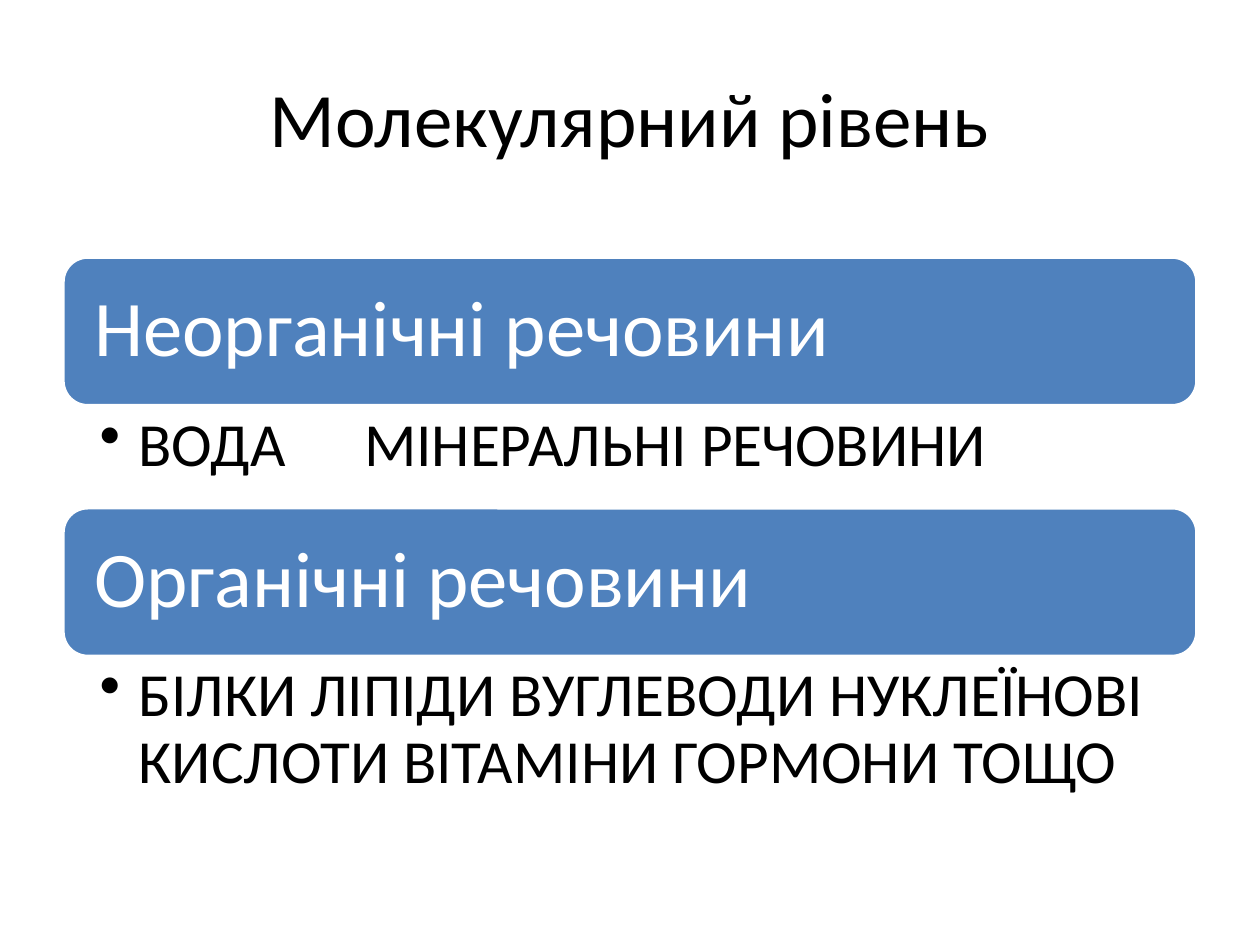
from lxml import etree
from pptx import Presentation
from pptx.dml.color import RGBColor
from pptx.enum.shapes import MSO_SHAPE
from pptx.enum.text import MSO_ANCHOR, PP_ALIGN
from pptx.oxml.ns import qn
from pptx.util import Inches, Pt

ROUND = MSO_SHAPE.ROUNDED_RECTANGLE
MIDDLE, TOP = MSO_ANCHOR.MIDDLE, MSO_ANCHOR.TOP
LEFT, CENTER = PP_ALIGN.LEFT, PP_ALIGN.CENTER

TITLE = "Молекулярний рівень"
GROUPS = [
    ("Неорганічні речовини", "ВОДА\tМІНЕРАЛЬНІ РЕЧОВИНИ", 0.81),
    ("Органічні речовини",
     "БІЛКИ ЛІПІДИ ВУГЛЕВОДИ НУКЛЕЇНОВІ КИСЛОТИ ВІТАМІНИ ГОРМОНИ ТОЩО", 1.2),
]
SIDE, WIDTH = 0.5, 9
START, BAR = 2.04, 1.18
HANG, STOP = 0.31, 2.1


def color(code):
    return RGBColor.from_string(code)


def write(shape, text, size, code, pads, anchor=MIDDLE, align=LEFT):
    frame = shape.text_frame
    frame.word_wrap = True
    frame.vertical_anchor = anchor
    (frame.margin_left, frame.margin_top,
     frame.margin_right, frame.margin_bottom) = map(Inches, pads)
    frame.text = text
    para = frame.paragraphs[0]
    para.alignment = align
    for run in para.runs:
        run.font.name = "Calibri"
        run.font.size = Pt(size)
        run.font.color.rgb = color(code)
    return para


def bullet(para):
    props = para._p.get_or_add_pPr()
    props.set("marL", str(Inches(HANG)))
    props.set("indent", str(-Inches(HANG)))
    etree.SubElement(props, qn("a:buChar"), char="•")
    if "\t" in para.text:
        tabs = etree.SubElement(props, qn("a:tabLst"))
        etree.SubElement(tabs, qn("a:tab"), pos=str(Inches(STOP)), algn="l")


deck = Presentation()
deck.slide_width, deck.slide_height = Inches(10), Inches(7.5)
slide = deck.slides.add_slide(deck.slide_layouts[6])
shapes = slide.shapes


def area(top, height):
    return [Inches(n) for n in (SIDE, top, WIDTH, height)]


title = shapes.add_textbox(*area(0.3, 1.25))
write(title, TITLE, 44, "000000", (0.1, 0.05, 0.1, 0.05), align=CENTER)

top = START
for head, body, height in GROUPS:
    bar = shapes.add_shape(ROUND, *area(top, BAR))
    bar.shadow.inherit = False
    bar.fill.solid()
    bar.fill.fore_color.rgb = color("4F81BD")
    bar.line.color.rgb = color("FFFFFF")
    bar.line.width = Pt(2)
    write(bar, head, 45, "FFFFFF", [0.19] * 4).line_spacing = 0.9
    top += BAR

    box = shapes.add_textbox(*area(top, height))
    para = write(box, body, 35, "000000", (0.29, 0.06, 0.35, 0.06), TOP)
    bullet(para)
    para.line_spacing = 0.9
    top += height

deck.save("out.pptx")
